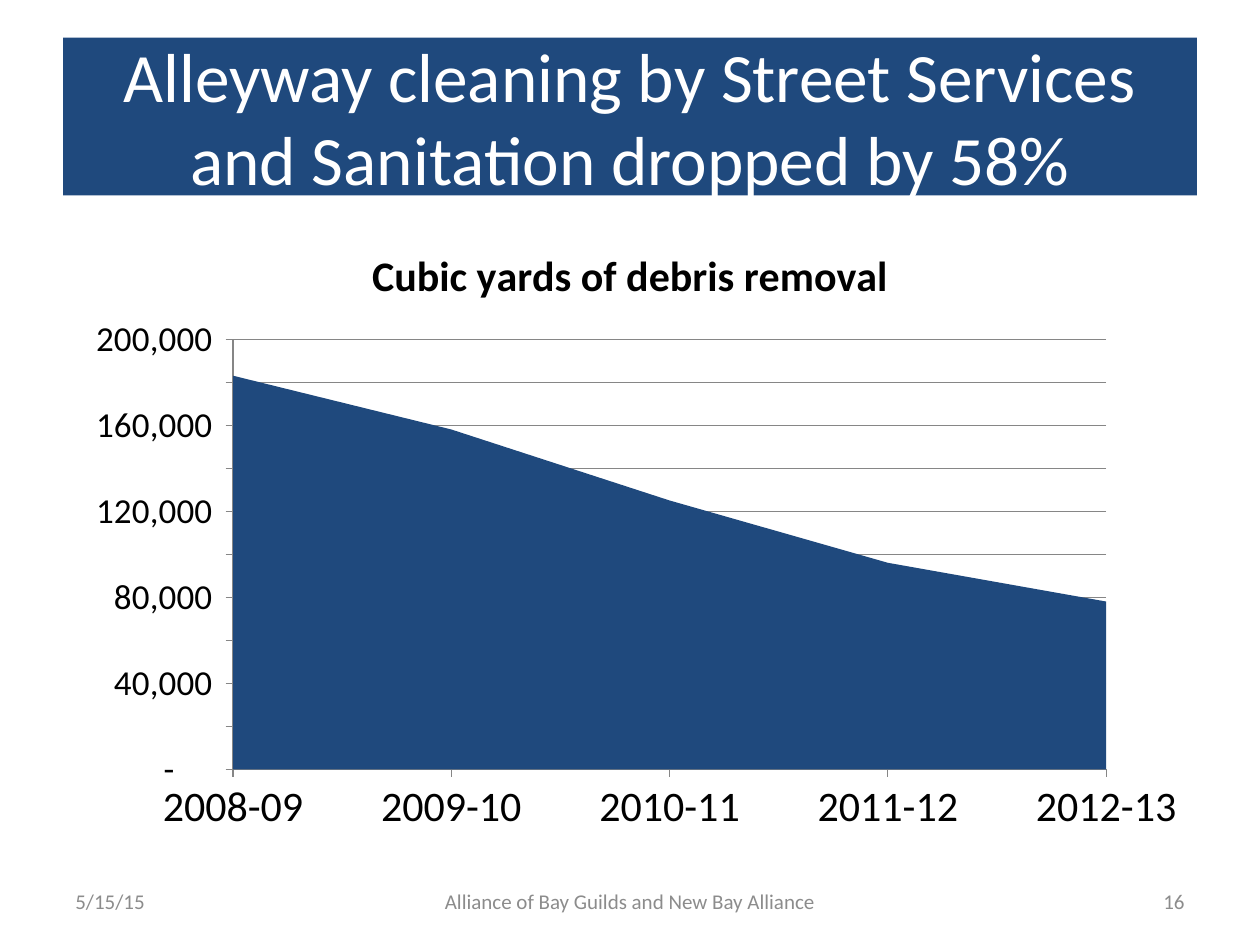
"""Build the alleyway cleaning slide with its area chart."""
from lxml import etree
from pptx import Presentation
from pptx.chart.data import CategoryChartData as Data
from pptx.dml.color import RGBColor as Rgb
from pptx.enum.chart import XL_CHART_TYPE as Kind, XL_TICK_MARK as Tick
from pptx.enum.text import MSO_ANCHOR as Anchor, MSO_AUTO_SIZE as Auto, PP_ALIGN as Align
from pptx.oxml.ns import qn
from pptx.util import Cm, Pt

NAVY = Rgb(0x1F, 0x49, 0x7D)
WHITE = Rgb(0xFF, 0xFF, 0xFF)
BLACK = Rgb(0, 0, 0)
GRAY = Rgb(0x8C, 0x8C, 0x8C)
LINE = Rgb(0x86, 0x86, 0x86)
FACE = "Calibri"

WIDE, HIGH, EDGE = 25.4, 19.05, 1.27
SPAN = WIDE - 2 * EDGE
TITLE = "Alleyway cleaning by Street Services and Sanitation dropped by 58%"
HEAD = "Cubic yards of debris removal"
YEARS = ["2008-09", "2009-10", "2010-11", "2011-12", "2012-13"]
YARDS = [183000, 158000, 125000, 96000, 78000]
MASK = '_(* #,##0_);_(* \\(#,##0\\);_(* "-"??_);_('
SCALE = {"minimum_scale": 0, "maximum_scale": 200000, "major_unit": 20000,
         "has_major_gridlines": True}
PLOT = {"layoutTarget": "inner", "xMode": "edge", "yMode": "edge",
        "x": 0.15, "y": 0.19, "w": 0.77, "h": 0.69}
FOOT = [
    ("5/15/15", 5.93, Align.LEFT),
    ("Alliance of Bay Guilds and New Bay Alliance", 8.04, Align.CENTER),
    ("16", 5.93, Align.RIGHT),
]


def style(item, **vals):
    for key, val in vals.items():
        setattr(item, key, val)


def write(shape, text, size, tint, align):
    frame = shape.text_frame
    style(frame, text=text, word_wrap=True, auto_size=Auto.NONE,
          vertical_anchor=Anchor.MIDDLE)
    para = frame.paragraphs[0]
    para.alignment = align
    font = para.runs[0].font
    style(font, size=Pt(size), name=FACE)
    font.color.rgb = tint


def place(shape, left, top, width, height):
    style(shape, left=Cm(left), top=Cm(top), width=Cm(width), height=Cm(height))


def add_title(slide):
    title = slide.shapes.title
    place(title, EDGE, 0.76, SPAN, 3.18)
    title.fill.solid()
    title.fill.fore_color.rgb = NAVY
    write(title, TITLE, 39.6, WHITE, Align.CENTER)


def add_foot(slide):
    spots = {Align.LEFT: 0, Align.CENTER: 0.5, Align.RIGHT: 1}
    for text, width, align in FOOT:
        left = EDGE + (SPAN - width) * spots[align]
        box = slide.shapes.add_textbox(Cm(left), Cm(17.66), Cm(width), Cm(1.01))
        write(box, text, 12, GRAY, align)


def fix_plot(chart):
    area = chart._chartSpace.chart.plotArea
    for old in area.findall(qn("c:layout")):
        area.remove(old)
    layout = etree.Element(qn("c:layout"))
    manual = etree.SubElement(layout, qn("c:manualLayout"))
    for key, val in PLOT.items():
        etree.SubElement(manual, qn("c:" + key)).set("val", str(val))
    area.insert(0, layout)
    for cross in area.iter(qn("c:crossBetween")):
        cross.set("val", "midCat")


def add_graph(slide):
    data = Data()
    data.categories = YEARS
    data.add_series("Series 1", YARDS)
    chart = slide.shapes.add_chart(
        Kind.AREA, Cm(EDGE), Cm(4.45), Cm(SPAN), Cm(12.57), data).chart
    style(chart, has_legend=False, has_title=True)
    style(chart.font, name=FACE, size=Pt(10))
    chart.font.color.rgb = BLACK

    head = chart.chart_title
    head.text_frame.text = HEAD
    font = head.text_frame.paragraphs[0].runs[0].font
    style(font, name=FACE, size=Pt(24), bold=True)
    font.color.rgb = BLACK

    plot = chart.plots[0]
    plot.vary_by_categories = False
    fill = plot.series[0].format.fill
    fill.solid()
    fill.fore_color.rgb = NAVY

    cats, vals = chart.category_axis, chart.value_axis
    style(cats, has_major_gridlines=False)
    style(vals, **SCALE)
    style(vals.tick_labels, number_format=MASK, number_format_is_linked=False)
    for axis, size in ((cats, 24), (vals, 20)):
        style(axis, major_tick_mark=Tick.OUTSIDE, minor_tick_mark=Tick.NONE)
        style(axis.tick_labels.font, name=FACE, size=Pt(size))
        axis.tick_labels.font.color.rgb = BLACK
    for part in (cats, vals, vals.major_gridlines):
        part.format.line.color.rgb = LINE
        part.format.line.width = Pt(0.75)
    fix_plot(chart)


def main():
    deck = Presentation()
    style(deck, slide_width=Cm(WIDE), slide_height=Cm(HIGH))
    slide = deck.slides.add_slide(deck.slide_layouts[5])
    add_title(slide)
    add_foot(slide)
    add_graph(slide)
    deck.save("out.pptx")


if __name__ == "__main__":
    main()
